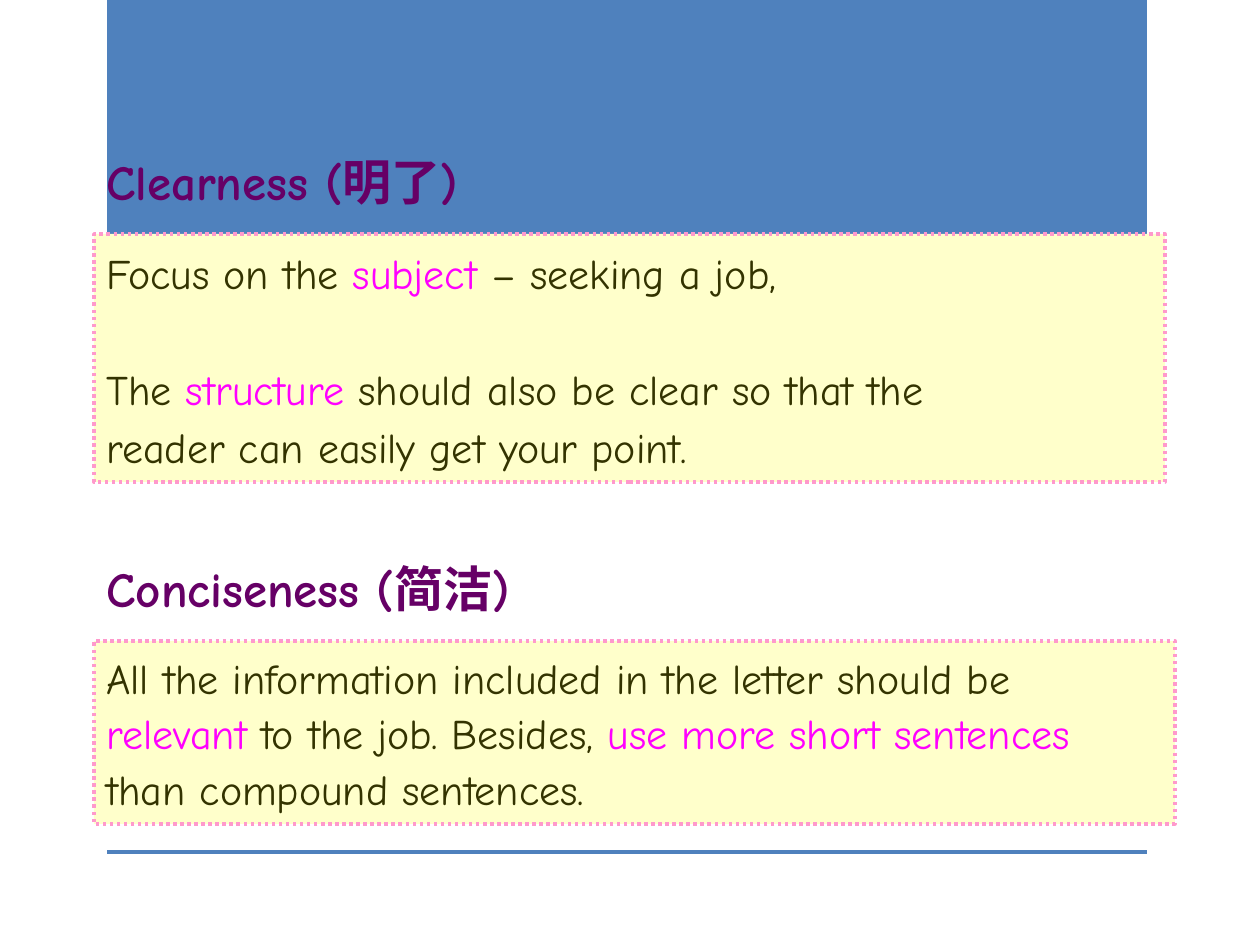
import pptx
import pptx.dml.color
import pptx.enum.dml
import pptx.enum.shapes
import pptx.enum.text
import pptx.util

PX = 914400 / 126
FONT = "Comic Neue"
BLUE, PURPLE, OLIVE, MAGENTA = "4F81BD", "660066", "333300", "FF00FF"
CREAM, PINK = "FFFFCB", "FF99CC"
LEFT = 94


def px(n):
    return pptx.util.Emu(round(n * PX))


def rgb(value):
    return pptx.dml.color.RGBColor.from_string(value)


def add_run(p, text, size, color, bold=False):
    r = p.add_run()
    r.text = text
    r.font.name = FONT
    r.font.size = pptx.util.Pt(size)
    r.font.bold = bold
    r.font.color.rgb = rgb(color)


def add_rect(s, x, y, w, h, fill):
    sp = s.shapes.add_shape(pptx.enum.shapes.MSO_SHAPE.RECTANGLE, px(x), px(y), px(w), px(h))
    sp.shadow.inherit = False
    sp.fill.solid()
    sp.fill.fore_color.rgb = rgb(fill)
    sp.line.fill.background()
    return sp


def add_heading(s, y, w, text):
    tf = s.shapes.add_textbox(px(LEFT), px(y), px(w), px(72)).text_frame
    tf.word_wrap = False
    add_run(tf.paragraphs[0], text, 28, PURPLE, bold=True)


def add_note(s, y, w, h, spacing, paragraphs):
    """Dotted box; each paragraph is (space before, [(text, color), ...])."""
    sp = add_rect(s, LEFT, y, w, h, CREAM)
    sp.line.color.rgb = rgb(PINK)
    sp.line.width = pptx.util.Pt(2)
    sp.line.dash_style = pptx.enum.dml.MSO_LINE.ROUND_DOT
    tf = sp.text_frame
    tf.word_wrap = True
    tf.vertical_anchor = pptx.enum.text.MSO_ANCHOR.TOP
    for i, (before, runs) in enumerate(paragraphs):
        p = tf.add_paragraph() if i else tf.paragraphs[0]
        p.alignment = pptx.enum.text.PP_ALIGN.LEFT
        p.line_spacing = spacing
        p.space_before = pptx.util.Pt(before)
        for text, color in runs:
            add_run(p, text, 24, color)


def main():
    prs = pptx.Presentation()
    prs.slide_width, prs.slide_height = px(1260), px(945)
    s = prs.slides.add_slide(prs.slide_layouts[6])

    # Top band and bottom rule
    for y, h in ((0, 420), (850, 4)):
        add_rect(s, 107, y, 1040, h, BLUE)

    # Clearness
    add_heading(s, 145, 403, "Clearness (明了)")
    add_note(s, 234, 1071, 248, 1.15, [
        (0, [("Focus on the", OLIVE), (" subject", MAGENTA), (" – seeking a job,", OLIVE)]),
        (33, [("The ", OLIVE), ("structure", MAGENTA),
              (" should also be clear so that the", OLIVE)]),
        (0, [("reader can easily get your point.", OLIVE)]),
    ])

    # Conciseness
    add_heading(s, 552, 454, "Conciseness (简洁)")
    add_note(s, 641, 1081, 183, 1.1, [
        (0, [("All the information included in the letter should be ", OLIVE),
             ("relevant", MAGENTA), (" to the job. Besides, ", OLIVE),
             ("use more short sentences", MAGENTA),
             (" than compound sentences.", OLIVE)]),
    ])

    prs.save("out.pptx")


if __name__ == "__main__":
    main()
